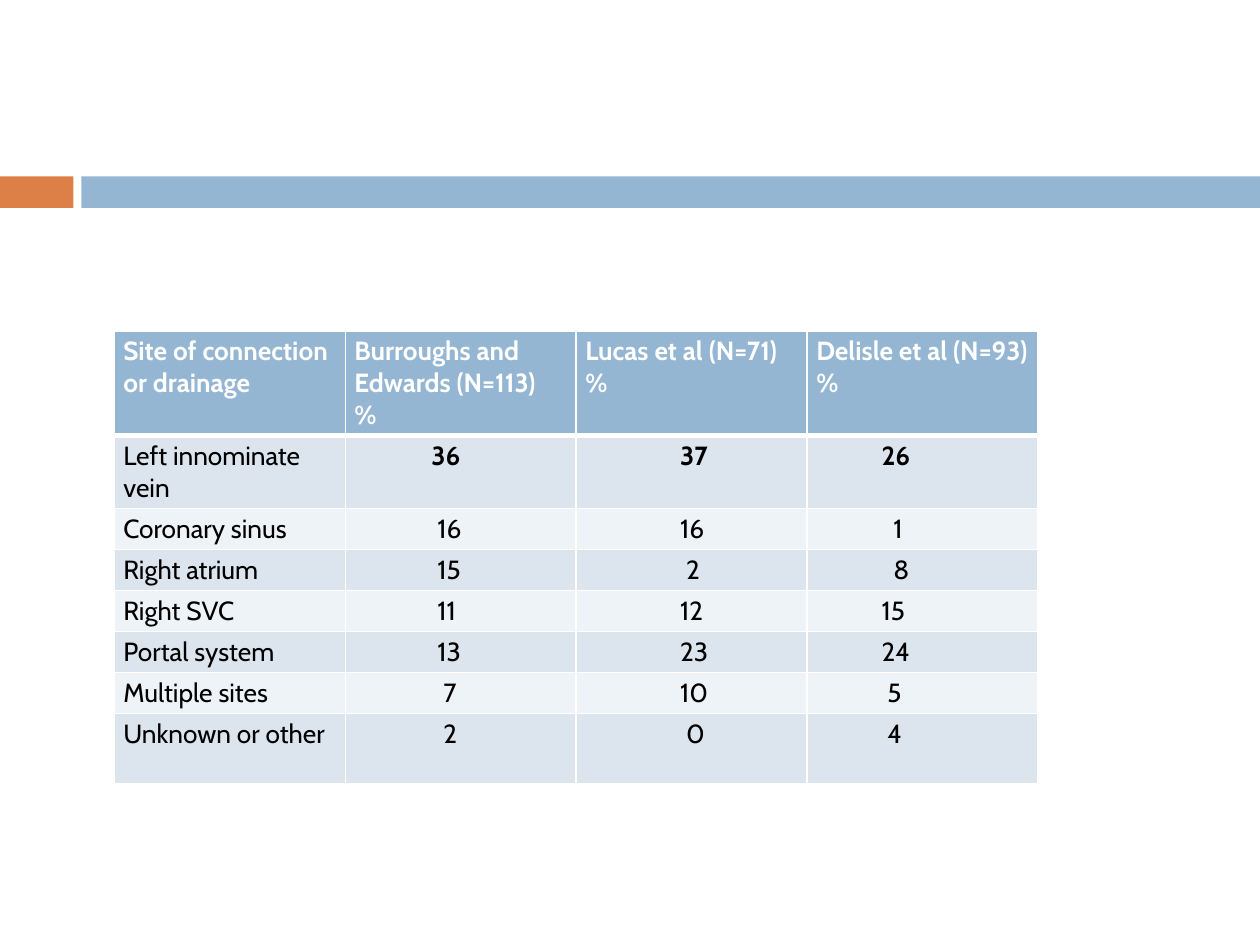
from lxml.etree import SubElement
from pptx import Presentation
from pptx.dml.color import RGBColor
from pptx.enum.shapes import MSO_SHAPE as Shape
from pptx.oxml.ns import qn
from pptx.util import Pt

BLUE = RGBColor(0x94, 0xB6, 0xD2)
ORANGE = RGBColor(0xDD, 0x80, 0x47)
LIGHT = RGBColor(0xDC, 0xE5, 0xEE)
PALE = RGBColor(0xEE, 0xF3, 0xF7)
WHITE = RGBColor(0xFF, 0xFF, 0xFF)
BLACK = RGBColor(0x00, 0x00, 0x00)

FONT_SIZE = 15
INDENT_STEP = 3.39
COLUMN_WIDTH = 132
ROW_HEIGHTS = [58.5, 40.5] + [23.4] * 5 + [40.5]

HEADERS = [
    "Site of connection or drainage",
    "Burroughs and Edwards (N=113)\n%",
    "Lucas et al (N=71)\n%",
    "Delisle et al (N=93)\n%",
]
# Each site is followed by (percentage, indent steps) for every study.
SITES = [
    ("Left innominate vein", (36, 13), (37, 16), (26, 11)),
    ("Coronary sinus", (16, 14), (16, 16), (1, 13)),
    ("Right atrium", (15, 14), (2, 17), (8, 13)),
    ("Right SVC", (11, 14), (12, 16), (15, 11)),
    ("Portal system", (13, 14), (23, 16), (24, 11)),
    ("Multiple sites", (7, 15), (10, 16), (5, 12)),
    ("Unknown or other", (2, 15), (0, 17), (4, 12)),
]


def add_bar(slide, left, width, color):
    bar = slide.shapes.add_shape(Shape.RECTANGLE, Pt(left), Pt(100.8), Pt(width), Pt(18))
    bar.shadow.inherit = False
    bar.fill.solid()
    bar.fill.fore_color.rgb = color
    bar.line.fill.background()


def set_borders(cell, widths):
    properties = cell._tc.get_or_add_tcPr()
    for index, (side, width) in enumerate(widths.items()):
        line = properties.makeelement(qn(f"a:{side}"), {"w": str(Pt(width))})
        fill = SubElement(line, qn("a:solidFill"))
        SubElement(fill, qn("a:srgbClr"), val=str(WHITE))
        properties.insert(index, line)


def fill_cell(cell, text, fill, color, bold=False, indent=0, top=1, bottom=1):
    cell.margin_left = cell.margin_right = Pt(5.2)
    cell.margin_top = cell.margin_bottom = Pt(2.6)
    cell.fill.solid()
    cell.fill.fore_color.rgb = fill
    set_borders(cell, {"lnL": 1, "lnR": 1, "lnT": top, "lnB": bottom})
    cell.text = text
    for paragraph in cell.text_frame.paragraphs:
        paragraph._p.get_or_add_pPr().set("marL", str(Pt(indent)))
        paragraph.font.name = "Cabin"
        paragraph.font.size = Pt(FONT_SIZE)
        paragraph.font.bold = bold
        paragraph.font.color.rgb = color


def add_site_table(slide):
    frame = slide.shapes.add_table(
        len(SITES) + 1, len(HEADERS), Pt(65.3), Pt(189),
        Pt(COLUMN_WIDTH * len(HEADERS)), Pt(sum(ROW_HEIGHTS)),
    )
    table = frame.table
    for column in table.columns:
        column.width = Pt(COLUMN_WIDTH)
    for row, height in zip(table.rows, ROW_HEIGHTS):
        row.height = Pt(height)
    for column, header in enumerate(HEADERS):
        fill_cell(table.cell(0, column), header, BLUE, WHITE, bold=True, bottom=3)
    for row, (site, *shares) in enumerate(SITES, start=1):
        fill = LIGHT if row % 2 else PALE
        top = 3 if row == 1 else 1
        fill_cell(table.cell(row, 0), site, fill, BLACK, top=top)
        for column, (share, steps) in enumerate(shares, start=1):
            fill_cell(table.cell(row, column), str(share), fill, BLACK,
                      bold=row == 1, indent=steps * INDENT_STEP, top=top)


def main():
    presentation = Presentation()
    presentation.slide_width = Pt(720)
    presentation.slide_height = Pt(540)
    slide = presentation.slides.add_slide(presentation.slide_layouts[6])
    add_bar(slide, 0, 42, ORANGE)
    add_bar(slide, 46.5, 673.5, BLUE)
    add_site_table(slide)
    presentation.save("out.pptx")


if __name__ == "__main__":
    main()
